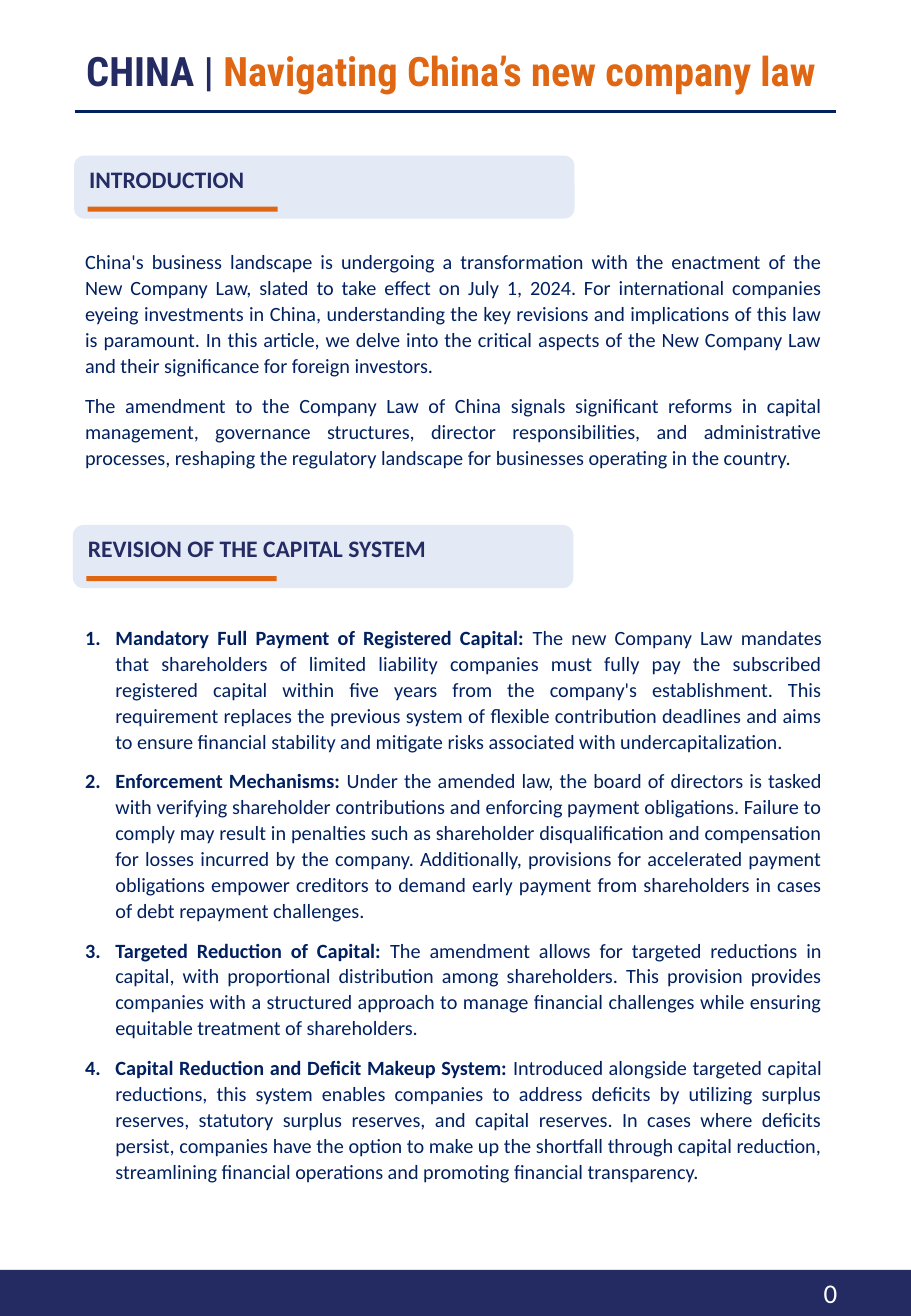
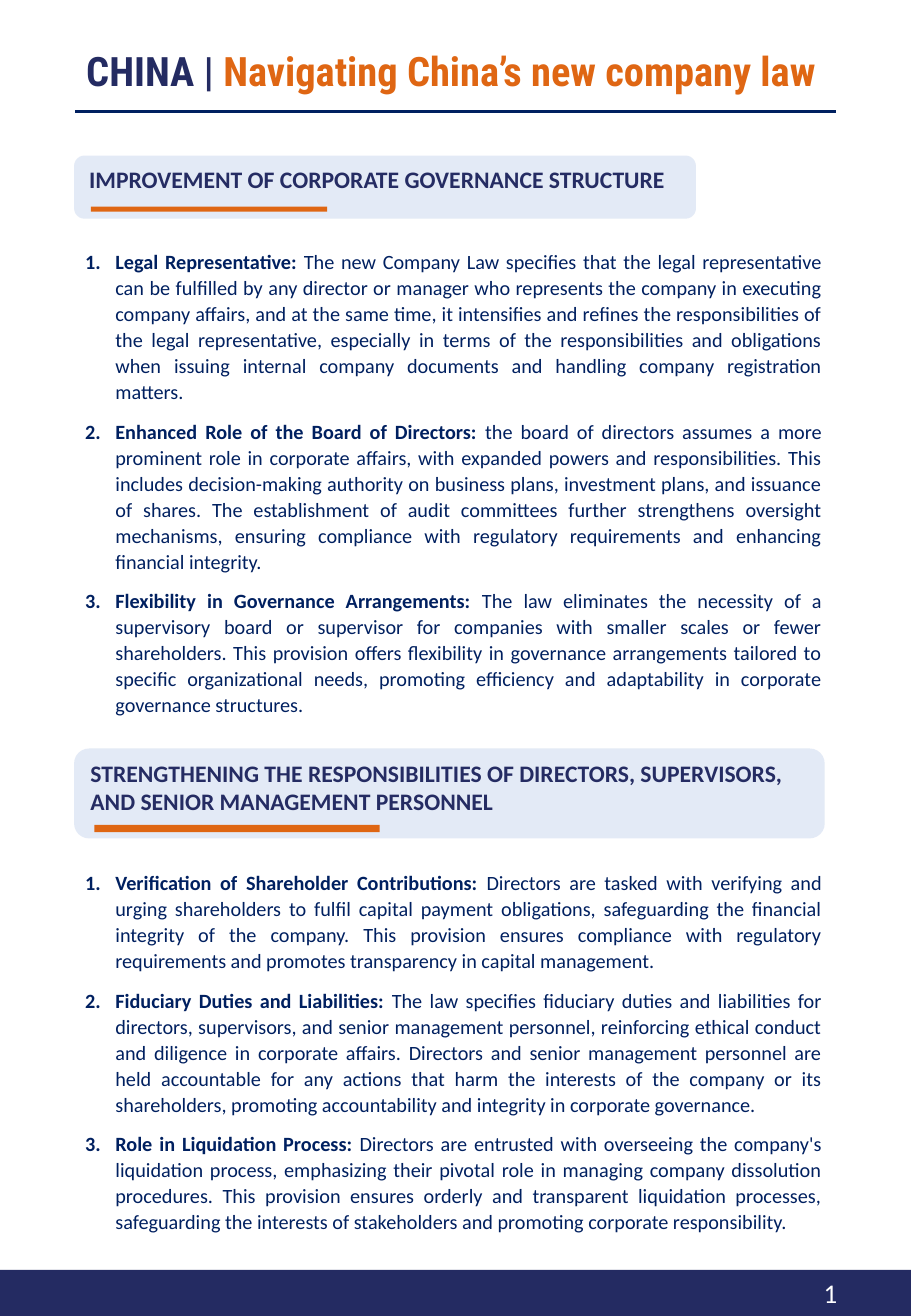
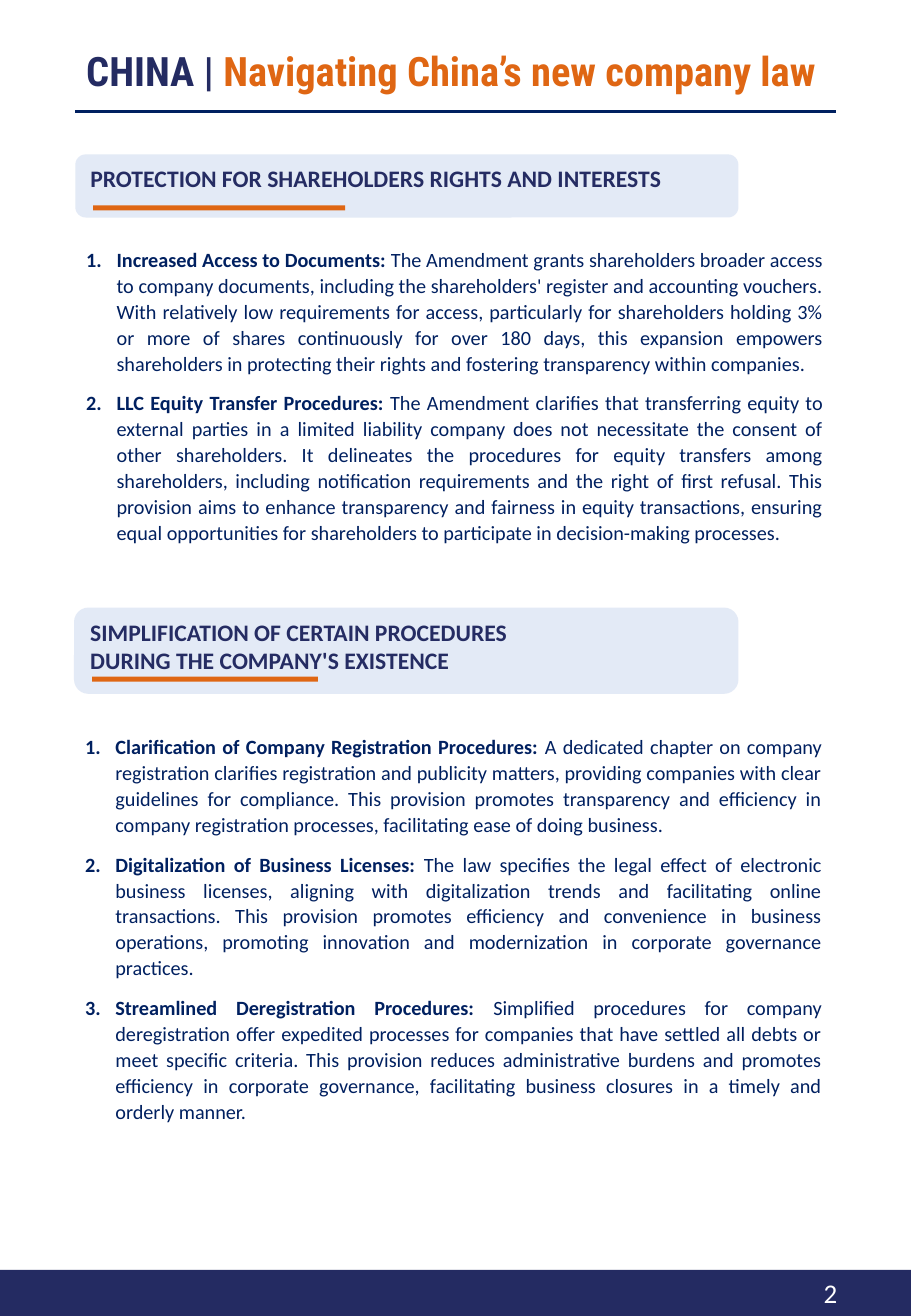
"""Build a three-page briefing on China's new company law."""
from dataclasses import dataclass

from lxml.etree import SubElement
from pptx import Presentation
from pptx.dml.color import RGBColor
from pptx.enum.shapes import MSO_CONNECTOR, MSO_SHAPE
from pptx.enum.text import MSO_ANCHOR as Anchor, MSO_AUTO_SIZE as AutoSize, PP_ALIGN as Align
from pptx.oxml.ns import qn
from pptx.util import Inches, Pt


@dataclass(frozen=True)
class Theme:
    """Colours, fonts and type sizes of the briefing."""
    navy: str = "242B62"
    heading: str = "252C63"
    ink: str = "002060"
    orange: str = "DF6613"
    panel: str = "CAD7EE"
    white: str = "FFFFFF"
    title_font: str = "Roboto Condensed"
    text_font: str = "Calibri"
    title_size: int = 24
    heading_size: int = 14
    text_size: int = 12
    number_size: int = 16


@dataclass(frozen=True)
class Section:
    """A heading panel and its text; bar holds shares of the panel: width, top, height."""
    heading: str
    panel: tuple
    text: tuple
    points: tuple
    bar: tuple = (0.38, 0.81, 0.08)


def grid(steps):
    """Turn grid steps, ten to the inch, into a length."""
    return Inches(steps / 10)


class Briefing:
    """Hold the theme and the current slide, and draw each kind of element."""
    COLS, ROWS = 75, 108.3
    LEFT, RIGHT = 6.2, 68.8
    BAND_ROWS = 3.8

    def __init__(self, theme):
        self.theme = theme
        self.deck = Presentation()
        self.deck.slide_width, self.deck.slide_height = grid(self.COLS), grid(self.ROWS)
        self.layout = self.deck.slide_layouts[3]
        for placeholder in list(self.layout.placeholders)[3:]:
            self.layout.shapes.element.remove(placeholder.element)
        self.slide = None

    def start(self, page):
        self.slide = self.deck.slides.add_slide(self.layout)
        if page == 0:
            self.frame()
        self.title("CHINA | ", "Navigating China’s new company law")
        self.page_number(page)

    def frame(self):
        band = self.block(MSO_SHAPE.RECTANGLE, (0, self.ROWS - self.BAND_ROWS, self.COLS, self.BAND_ROWS),
                          self.theme.navy)
        rule = self.slide.shapes.add_connector(
            MSO_CONNECTOR.STRAIGHT, grid(self.LEFT), grid(9.2), grid(self.RIGHT), grid(9.2))
        rule.line.color.rgb = RGBColor.from_string(self.theme.ink)
        rule.line.width = Pt(1.5)
        SubElement(rule.element.spPr, qn("a:effectLst"))
        for part in (rule, band):
            self.layout.shapes.element.insert(2, part.element)

    def block(self, outline, box, colour):
        block = self.slide.shapes.add_shape(outline, *map(grid, box))
        block.shadow.inherit = False
        block.fill.solid()
        block.fill.fore_color.rgb = RGBColor.from_string(colour)
        block.line.fill.background()
        return block

    def style(self, run, size, colour, bold=False, font=None):
        run.font.name = font or self.theme.text_font
        run.font.size = Pt(size)
        run.font.bold = bold
        run.font.color.rgb = RGBColor.from_string(colour)

    def place(self, placeholder, box):
        placeholder.left, placeholder.top, placeholder.width, placeholder.height = map(grid, box)
        return placeholder.text_frame

    def title(self, country, topic):
        frame = self.place(self.slide.shapes.title, (6.1, 3.4, 68.9, 5.2))
        frame.auto_size = AutoSize.NONE
        frame.vertical_anchor = Anchor.MIDDLE
        line = frame.paragraphs[0]
        line.alignment, line.line_spacing = Align.LEFT, 0.9
        for words, colour in ((country, self.theme.navy), (topic, self.theme.orange)):
            run = line.add_run()
            run.text = words
            self.style(run, self.theme.title_size, colour, True, self.theme.title_font)

    def page_number(self, page):
        frame = self.slide.shapes.add_textbox(*map(grid, (53, 104.6, 16.9, 3.8))).text_frame
        frame.word_wrap = True
        frame.text = str(page)
        frame.paragraphs[0].alignment = Align.RIGHT
        self.style(frame.paragraphs[0].runs[0], self.theme.number_size, self.theme.white)

    def heading(self, section):
        col, row, cols, rows = section.panel
        panel = self.block(MSO_SHAPE.ROUNDED_RECTANGLE, section.panel, self.theme.panel)
        tint = panel.element.spPr.find(".//" + qn("a:srgbClr"))
        SubElement(tint, qn("a:alpha"), val="52000")
        frame = panel.text_frame
        frame.word_wrap = True
        frame.vertical_anchor = Anchor.TOP
        frame.text = section.heading
        for line in frame.paragraphs:
            line.alignment = Align.LEFT
            self.style(line.runs[0], self.theme.heading_size, self.theme.heading, True)
        width, top, height = section.bar
        self.block(MSO_SHAPE.RECTANGLE,
                   (col + 0.027 * cols, row + top * rows, width * cols, height * rows),
                   self.theme.orange)

    def body(self, section, slot):
        frame = self.place(self.slide.placeholders[slot], section.text)
        frame.auto_size = AutoSize.SHAPE_TO_FIT_TEXT
        frame.vertical_anchor = Anchor.TOP
        for index, (lead, words) in enumerate(section.points):
            paragraph = frame.add_paragraph() if index else frame.paragraphs[0]
            self.number(paragraph, bool(lead))
            paragraph.alignment = Align.JUSTIFY
            paragraph.line_spacing = 1.07
            paragraph.space_before, paragraph.space_after = Pt(0), Pt(8)
            for part, bold in ((lead, True), (words, False)):
                if part:
                    run = paragraph.add_run()
                    run.text = part
                    self.style(run, self.theme.text_size, self.theme.ink, bold)

    def number(self, paragraph, numbered):
        properties = paragraph._p.get_or_add_pPr()
        indent = grid(2.5) if numbered else 0
        properties.set("marL", str(indent))
        properties.set("indent", str(-indent))
        if numbered:
            SubElement(properties, qn("a:buFont"), typeface=self.theme.text_font)
            SubElement(properties, qn("a:buAutoNum"), type="arabicPeriod")
        else:
            SubElement(properties, qn("a:buNone"))


PAGES = (
    (
        Section("INTRODUCTION", (6.1, 12.8, 41.2, 5.2), (6, 19.9, 62.7, 19.3), (
            ("", "China's business landscape is undergoing a transformation with the enactment of the "
                 "New Company Law, slated to take effect on July 1, 2024. For international companies "
                 "eyeing investments in China, understanding the key revisions and implications of this "
                 "law is paramount. In this article, we delve into the critical aspects of the New "
                 "Company Law and their significance for foreign investors."),
            ("", "The amendment to the Company Law of China signals significant reforms in capital "
                 "management, governance structures, director responsibilities, and administrative "
                 "processes, reshaping the regulatory landscape for businesses operating in the country."),
        )),
        Section("REVISION OF THE CAPITAL SYSTEM", (6, 43.2, 41.2, 5.2), (6, 50.8, 62.7, 47.5), (
            ("Mandatory Full Payment of Registered Capital: ",
             "The new Company Law mandates that shareholders of limited liability companies must fully "
             "pay the subscribed registered capital within five years from the company's establishment. "
             "This requirement replaces the previous system of flexible contribution deadlines and aims "
             "to ensure financial stability and mitigate risks associated with undercapitalization."),
            ("Enforcement Mechanisms: ",
             "Under the amended law, the board of directors is tasked with verifying shareholder "
             "contributions and enforcing payment obligations. Failure to comply may result in penalties "
             "such as shareholder disqualification and compensation for losses incurred by the company. "
             "Additionally, provisions for accelerated payment obligations empower creditors to demand "
             "early payment from shareholders in cases of debt repayment challenges."),
            ("Targeted Reduction of Capital: ",
             "The amendment allows for targeted reductions in capital, with proportional distribution "
             "among shareholders. This provision provides companies with a structured approach to manage "
             "financial challenges while ensuring equitable treatment of shareholders."),
            ("Capital Reduction and Deficit Makeup System: ",
             "Introduced alongside targeted capital reductions, this system enables companies to address "
             "deficits by utilizing surplus reserves, statutory surplus reserves, and capital reserves. "
             "In cases where deficits persist, companies have the option to make up the shortfall through "
             "capital reduction, streamlining financial operations and promoting financial transparency."),
        )),
    ),
    (
        Section("IMPROVEMENT OF CORPORATE GOVERNANCE STRUCTURE", (6.1, 12.8, 51.2, 5.2),
                (6, 19.9, 62.7, 39.9), (
            ("Legal Representative: ",
             "The new Company Law specifies that the legal representative can be fulfilled by any "
             "director or manager who represents the company in executing company affairs, and at the "
             "same time, it intensifies and refines the responsibilities of the legal representative, "
             "especially in terms of the responsibilities and obligations when issuing internal company "
             "documents and handling company registration matters."),
            ("Enhanced Role of the Board of Directors: ",
             "the board of directors assumes a more prominent role in corporate affairs, with expanded "
             "powers and responsibilities. This includes decision-making authority on business plans, "
             "investment plans, and issuance of shares. The establishment of audit committees further "
             "strengthens oversight mechanisms, ensuring compliance with regulatory requirements and "
             "enhancing financial integrity."),
            ("Flexibility in Governance Arrangements: ",
             "The law eliminates the necessity of a supervisory board or supervisor for companies with "
             "smaller scales or fewer shareholders. This provision offers flexibility in governance "
             "arrangements tailored to specific organizational needs, promoting efficiency and "
             "adaptability in corporate governance structures."),
        )),
        Section("STRENGTHENING THE RESPONSIBILITIES OF DIRECTORS, SUPERVISORS, "
                "AND SENIOR MANAGEMENT PERSONNEL", (6.1, 61.6, 61.8, 7.4), (6, 71, 62.7, 31.3), (
            ("Verification of Shareholder Contributions: ",
             "Directors are tasked with verifying and urging shareholders to fulfil capital payment "
             "obligations, safeguarding the financial integrity of the company. This provision ensures "
             "compliance with regulatory requirements and promotes transparency in capital management."),
            ("Fiduciary Duties and Liabilities: ",
             "The law specifies fiduciary duties and liabilities for directors, supervisors, and senior "
             "management personnel, reinforcing ethical conduct and diligence in corporate affairs. "
             "Directors and senior management personnel are held accountable for any actions that harm "
             "the interests of the company or its shareholders, promoting accountability and integrity "
             "in corporate governance."),
            ("Role in Liquidation Process: ",
             "Directors are entrusted with overseeing the company's liquidation process, emphasizing "
             "their pivotal role in managing company dissolution procedures. This provision ensures "
             "orderly and transparent liquidation processes, safeguarding the interests of stakeholders "
             "and promoting corporate responsibility."),
        ), (0.38, 0.85, 0.08)),
    ),
    (
        Section("PROTECTION FOR SHAREHOLDERS RIGHTS AND INTERESTS", (6.2, 12.7, 54.6, 5.2),
                (6.1, 19.7, 62.7, 25.8), (
            ("Increased Access to Documents: ",
             "The Amendment grants shareholders broader access to company documents, including the "
             "shareholders' register and accounting vouchers. With relatively low requirements for "
             "access, particularly for shareholders holding 3% or more of shares continuously for over "
             "180 days, this expansion empowers shareholders in protecting their rights and fostering "
             "transparency within companies."),
            ("LLC Equity Transfer Procedures: ",
             "The Amendment clarifies that transferring equity to external parties in a limited "
             "liability company does not necessitate the consent of other shareholders. It delineates "
             "the procedures for equity transfers among shareholders, including notification "
             "requirements and the right of first refusal. This provision aims to enhance transparency "
             "and fairness in equity transactions, ensuring equal opportunities for shareholders to "
             "participate in decision-making processes."),
        )),
        Section("SIMPLIFICATION OF CERTAIN PROCEDURES\nDURING THE COMPANY'S EXISTENCE",
                (6.1, 50, 54.7, 7.1), (6, 59.8, 62.7, 36.7), (
            ("Clarification of Company Registration Procedures: ",
             "A dedicated chapter on company registration clarifies registration and publicity matters, "
             "providing companies with clear guidelines for compliance. This provision promotes "
             "transparency and efficiency in company registration processes, facilitating ease of doing "
             "business."),
            ("Digitalization of Business Licenses: ",
             "The law specifies the legal effect of electronic business licenses, aligning with "
             "digitalization trends and facilitating online transactions. This provision promotes "
             "efficiency and convenience in business operations, promoting innovation and modernization "
             "in corporate governance practices."),
            ("Streamlined Deregistration Procedures: ",
             "Simplified procedures for company deregistration offer expedited processes for companies "
             "that have settled all debts or meet specific criteria. This provision reduces "
             "administrative burdens and promotes efficiency in corporate governance, facilitating "
             "business closures in a timely and orderly manner."),
        ), (0.34, 0.8, 0.06)),
    ),
)


def main():
    """Draw every page and save the briefing."""
    briefing = Briefing(Theme())
    for page, sections in enumerate(PAGES):
        briefing.start(page)
        for slot, section in enumerate(sections, start=1):
            briefing.heading(section)
            briefing.body(section, slot)
    briefing.deck.save("out.pptx")


if __name__ == "__main__":
    main()
